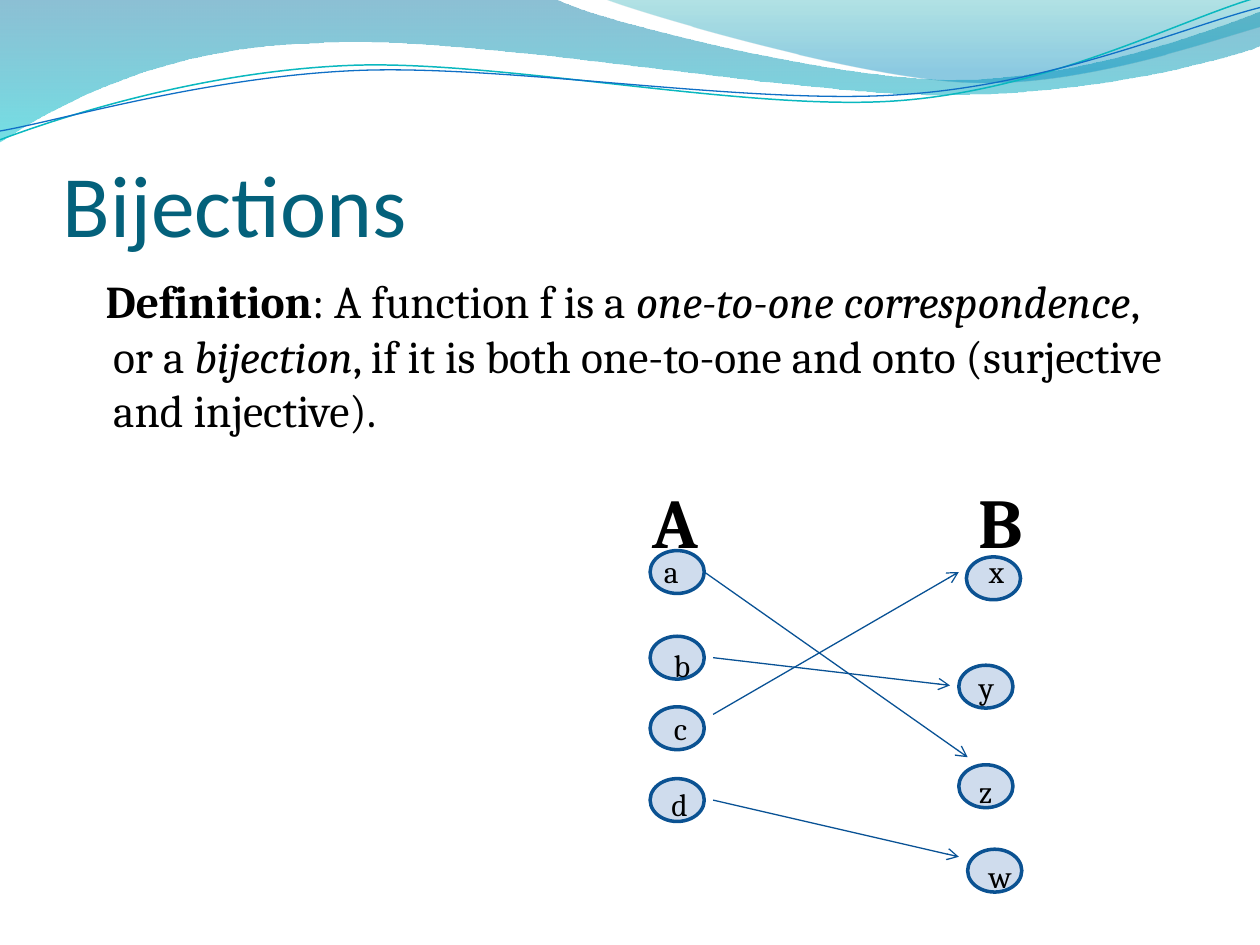
from lxml.etree import SubElement
from pptx import Presentation
from pptx.dml.color import RGBColor
from pptx.enum.shapes import MSO_CONNECTOR, MSO_SHAPE
from pptx.enum.text import MSO_ANCHOR
from pptx.oxml.ns import qn
from pptx.util import Inches, Pt

BLACK = RGBColor(0x00, 0x00, 0x00)
TITLE_TEAL = RGBColor(0x04, 0x61, 0x7B)
NODE_FILL = RGBColor(0x4F, 0x81, 0xBD)
NODE_LINE = RGBColor(0x0B, 0x52, 0x92)
ARROW_BLUE = RGBColor(0x09, 0x52, 0x95)
WAVE_BLUE = RGBColor(0x00, 0x74, 0xA1)
WAVE_CYAN = RGBColor(0x00, 0xC6, 0xCF)
CREST_TEAL = RGBColor(0x00, 0xA1, 0xA9)
CREST_BLUE = RGBColor(0x00, 0x8B, 0xBF)
STROKE_TEAL = RGBColor(0x0A, 0xB8, 0xBF)
STROKE_BLUE = RGBColor(0x0F, 0x6F, 0xC6)

NODE_W, NODE_H = 0.43, 0.34
LEFT_X = 5.16

WAVE = [
    (0, 0), (4.4, -0.01),
    (4.76, 0.17, 6.64, 0.63, 7.58, 0.63), (8.53, 0.63, 9.58, 0.26, 10, 0.09),
    (10.01, 0.36),
    (9.83, 0.44, 8.7, 0.76, 7.46, 0.75), (6.22, 0.75, 3.82, 0.28, 2.57, 0.34),
    (1.29, 0.36, 0.46, 0.83, -0.01, 1.13), (0, 0),
]
CREST = [
    (4.79, -0.01),
    (5.09, 0.11, 6.82, 0.62, 7.69, 0.65), (8.56, 0.69, 9.61, 0.32, 10, 0.21),
    (10, 0), (4.79, -0.01),
]
TEAL_STROKE = [
    (0, 1.11),
    (0.48, 0.93, 1.58, 0.57, 2.77, 0.52), (3.95, 0.47, 5.93, 0.89, 7.13, 0.8),
    (8.33, 0.71, 9.38, 0.15, 9.98, -0.02),
]
BLUE_STROKE = [
    (0, 1.04),
    (0.47, 0.96, 1.64, 0.61, 2.83, 0.56), (4.03, 0.51, 5.97, 0.84, 7.17, 0.75),
    (8.36, 0.67, 9.41, 0.21, 10, 0.06),
]

NODES = [
    ("a", LEFT_X, 4.37, 5.17, 4.33),
    ("b", LEFT_X, 5.05, 5.25, 5.08),
    ("c", LEFT_X, 5.61, 5.25, 5.58),
    ("d", LEFT_X, 6.18, 5.23, 6.18),
    ("x", 7.67, 4.42, 7.75, 4.33),
    ("y", 7.61, 5.28, 7.67, 5.25),
    ("z", 7.61, 6.07, 7.67, 6.08),
    ("w", 7.68, 6.74, 7.75, 6.75),
]
ARROWS = [
    (5.59, 4.54, 7.68, 6.01),
    (5.66, 5.22, 7.54, 5.44),
    (5.66, 5.67, 7.61, 4.54),
    (5.66, 6.35, 7.61, 6.8),
]
DEFINITION = [
    ("Definition", True, False),
    (": A function f is a ", False, False),
    ("one-to-one correspondence", False, True),
    (", or a ", False, False),
    ("bijection", False, True),
    (", if it is both one-to-one and onto (surjective and injective).", False, False),
]


def set_alpha(fill_element, percents):
    for color, percent in zip(fill_element.iter(qn("a:srgbClr")), percents):
        SubElement(color, qn("a:alpha")).set("val", str(percent * 1000))


def bend(sp, segments):
    lines = iter(list(sp._element.iter(qn("a:lnTo"))))
    for segment in segments:
        line = next(lines)
        if len(segment) == 2:
            continue
        curve = line.getparent().makeelement(qn("a:cubicBezTo"))
        line.addprevious(curve)
        for part in (line, next(lines), next(lines)):
            curve.append(part[0])
            part.getparent().remove(part)


def add_outline(slide, segments, close):
    points = [
        (Inches(segment[i]), Inches(segment[i + 1]))
        for segment in segments for i in range(0, len(segment), 2)
    ]
    builder = slide.shapes.build_freeform(*points[0])
    builder.add_line_segments(points[1:], close=close)
    sp = builder.convert_to_shape()
    sp.shadow.inherit = False
    bend(sp, segments[1:])
    return sp


def add_wave(slide, segments, colors, alphas, end):
    sp = add_outline(slide, segments, True)
    sp.line.fill.background()
    sp.fill.gradient()
    sp.fill.gradient_angle = 270
    stops = sp.fill.gradient_stops
    for stop, color, position in zip(stops, colors, (0, end)):
        stop.color.rgb = color
        stop.position = position
    set_alpha(sp._element.spPr.find(qn("a:gradFill")), alphas)


def add_stroke(slide, segments, color, width):
    sp = add_outline(slide, segments, False)
    sp.fill.background()
    sp.line.color.rgb = color
    sp.line.width = Pt(width)


def add_text(slide, box, runs, size, font="Cambria", color=BLACK, wrap=False):
    sp = slide.shapes.add_textbox(*map(Inches, box))
    tf = sp.text_frame
    tf.word_wrap = wrap
    p = tf.paragraphs[0]
    p.font.size = Pt(size)
    p.font.name = font
    p.font.color.rgb = color
    for text, bold, italic in runs:
        r = p.add_run()
        r.text = text
        r.font.bold = bold
        r.font.italic = italic
    return tf


def add_title(slide, text):
    tf = add_text(slide, (0.5, 0.77, 9, 1.25), [(text, False, False)], 50,
                  "Calibri", TITLE_TEAL, True)
    tf.vertical_anchor = MSO_ANCHOR.BOTTOM
    tf.margin_left = tf.margin_right = tf.margin_bottom = 0


def add_definition(slide):
    tf = add_text(slide, (0.5, 2.12, 9, 4.8), DEFINITION, 26, wrap=True)
    pPr = tf.paragraphs[0]._p.get_or_add_pPr()
    pPr.set("marL", str(Inches(0.3)))
    pPr.set("indent", str(Inches(-0.06)))


def add_node(slide, left, top):
    sp = slide.shapes.add_shape(MSO_SHAPE.FLOWCHART_CONNECTOR, Inches(left),
                                Inches(top), Inches(NODE_W), Inches(NODE_H))
    sp.shadow.inherit = False
    sp.fill.solid()
    sp.fill.fore_color.rgb = NODE_FILL
    set_alpha(sp._element.spPr.find(qn("a:solidFill")), [27])
    sp.line.color.rgb = NODE_LINE
    sp.line.width = Pt(2)


def add_arrow(slide, ends):
    line = slide.shapes.add_connector(MSO_CONNECTOR.STRAIGHT, *map(Inches, ends))
    line.line.color.rgb = ARROW_BLUE
    line.line.width = Pt(0.75)
    SubElement(line.line._get_or_add_ln(), qn("a:tailEnd")).set("type", "arrow")
    SubElement(line._element.spPr, qn("a:effectLst"))


def main():
    prs = Presentation()
    prs.slide_width, prs.slide_height = Inches(10), Inches(7.5)
    slide = prs.slides.add_slide(prs.slide_layouts[6])

    add_wave(slide, WAVE, (WAVE_BLUE, WAVE_CYAN), (45, 55), 1)
    add_wave(slide, CREST, (CREST_TEAL, CREST_BLUE), (30, 45), 0.8)
    add_stroke(slide, TEAL_STROKE, STROKE_TEAL, 0.85)
    add_stroke(slide, BLUE_STROKE, STROKE_BLUE, 0.75)

    add_title(slide, "Bijections")
    add_definition(slide)

    for name, left in (("A", 5.08), ("B", 7.67)):
        add_text(slide, (left, 3.75, 0.65, 0.52), [(name, True, False)], 40)
    for label, left, top, text_left, text_top in NODES:
        add_node(slide, left, top)
        add_text(slide, (text_left, text_top, 0.29, 0.27), [(label, False, False)], 18)
    for ends in ARROWS:
        add_arrow(slide, ends)

    prs.save("out.pptx")


if __name__ == "__main__":
    main()
